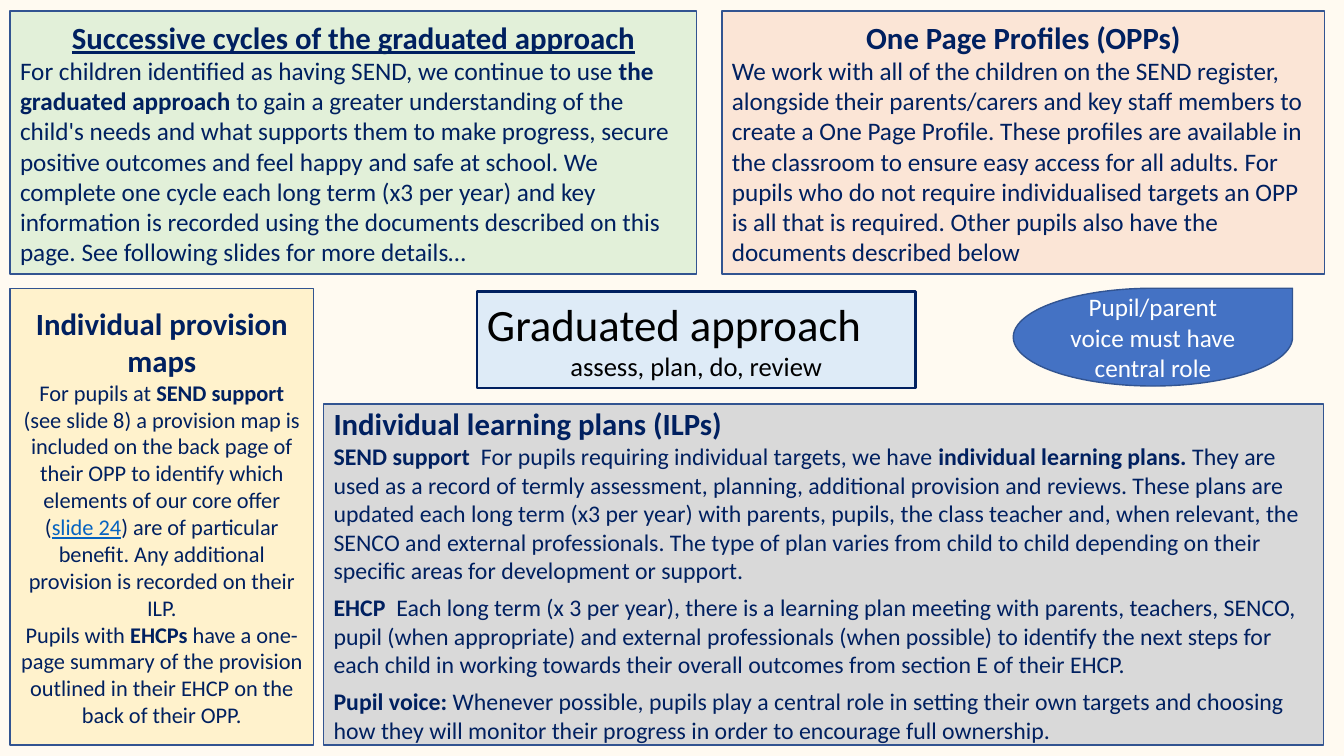
from dataclasses import dataclass

from pptx import Presentation
from pptx.dml.color import RGBColor
from pptx.enum.shapes import MSO_SHAPE as Shape
from pptx.enum.text import MSO_ANCHOR as Anchor, MSO_AUTO_SIZE as AutoSize, PP_ALIGN as Align
from pptx.util import Inches, Pt


@dataclass(frozen=True)
class Theme:
    font: str = "Calibri"
    background: str = "FFFAF1"
    navy: str = "002060"
    black: str = "000000"
    white: str = "FFFFFF"
    link: str = "0563C1"
    outline: str = "325491"
    green: str = "E2F0D9"
    peach: str = "FBE5D6"
    grey: str = "D9D9D9"
    yellow: str = "FFF2CC"
    pale_blue: str = "DEEBF7"
    blue: str = "4472C4"
    title: int = 32
    heading: int = 22
    subtitle: int = 19
    body: int = 18
    plan: int = 17
    small: int = 16


THEME = Theme()


@dataclass
class Run:
    text: str
    bold: bool = False
    underline: bool = False
    color: str = ""


@dataclass
class Line:
    runs: list
    size: int = THEME.body
    align: Align = Align.LEFT
    before: int = 0


def heading(text, align=Align.CENTER, underline=False):
    return Line([Run(text, True, underline)], THEME.heading, align)


class SlideBuilder:
    """Hold the theme and the current slide, and add styled elements to it."""

    def __init__(self, presentation, theme):
        self.theme = theme
        self.slide = presentation.slides.add_slide(presentation.slide_layouts[5])
        fill = self.slide.background.fill
        fill.solid()
        fill.fore_color.rgb = RGBColor.from_string(theme.background)

    def paint(self, shape, fill, outline, width):
        shape.fill.solid()
        shape.fill.fore_color.rgb = RGBColor.from_string(fill)
        shape.line.color.rgb = RGBColor.from_string(outline)
        shape.line.width = Pt(width)

    def set_lines(self, shape, lines, color, anchor):
        frame = shape.text_frame
        frame.word_wrap = True
        frame.auto_size = AutoSize.NONE
        frame.vertical_anchor = anchor
        frame.text = "\n".join("" for _ in lines)
        for paragraph, line in zip(frame.paragraphs, lines):
            paragraph.alignment = line.align
            paragraph.space_before = Pt(line.before)
            for part in line.runs:
                run = paragraph.add_run()
                run.text = part.text
                font = run.font
                font.name = self.theme.font
                font.size = Pt(line.size)
                font.bold = part.bold
                font.underline = part.underline
                font.color.rgb = RGBColor.from_string(part.color or color)

    def title(self, left, top, width, height, lines):
        shape = self.slide.shapes.title
        shape.left, shape.top = Inches(left), Inches(top)
        shape.width, shape.height = Inches(width), Inches(height)
        self.paint(shape, self.theme.pale_blue, self.theme.navy, 1.75)
        self.set_lines(shape, lines, self.theme.black, Anchor.TOP)

    def panel(self, left, top, width, height, fill, lines, kind=Shape.RECTANGLE, color=THEME.navy):
        shape = self.slide.shapes.add_shape(
            kind, Inches(left), Inches(top), Inches(width), Inches(height))
        shape.shadow.inherit = False
        self.paint(shape, fill, self.theme.outline, 1)
        self.set_lines(shape, lines, color, Anchor.MIDDLE)


def main():
    presentation = Presentation()
    presentation.slide_width, presentation.slide_height = Inches(13.33), Inches(7.5)
    builder = SlideBuilder(presentation, THEME)

    builder.panel(0.1, 0.11, 6.81, 2.61, THEME.green, [
        heading("Successive cycles of the graduated approach", underline=True),
        Line([
            Run("For children identified as having SEND, we continue to use "),
            Run("the graduated approach", bold=True),
            Run(" to gain a greater understanding of the child's needs and what supports them to "
                "make progress, secure positive outcomes and feel happy and safe at school. We "
                "complete one cycle each long term (x3 per year) and key information is recorded "
                "using the documents described on this page. See following slides for more "
                "details…"),
        ]),
    ])

    builder.panel(7.16, 0.11, 5.98, 2.61, THEME.peach, [
        heading("One Page Profiles (OPPs)"),
        Line([
            Run("We work with all of the children on the SEND register, alongside their "
                "parents/carers and key staff members to create a One Page Profile. These profiles "
                "are available in the classroom to ensure easy access for all adults. For pupils "
                "who do not require individualised targets an OPP is all that is required. Other "
                "pupils also have the documents described below"),
        ]),
    ])

    builder.panel(3.21, 4.01, 9.92, 3.38, THEME.grey, [
        heading("Individual learning plans (ILPs)", Align.LEFT),
        Line([
            Run("SEND support  ", bold=True),
            Run("For pupils requiring individual targets, we have "),
            Run("individual learning plans. ", bold=True),
            Run("They are used as a record of termly assessment, planning, additional provision "
                "and reviews. These plans are updated each long term (x3 per year) with parents, "
                "pupils, the class teacher and, when relevant, the SENCO and external "
                "professionals. The type of plan varies from child to child depending on their "
                "specific areas for development or support."),
        ], THEME.plan),
        Line([
            Run("EHCP  ", bold=True),
            Run("Each long term (x 3 per year), there is a learning plan meeting with parents, "
                "teachers, SENCO, pupil (when appropriate) and external professionals (when "
                "possible) to identify the next steps for each child in working towards their "
                "overall outcomes from section E of their EHCP."),
        ], THEME.plan, before=6),
        Line([
            Run("Pupil voice: ", bold=True),
            Run("Whenever possible, pupils play a central role in setting their own targets and "
                "choosing how they will monitor their progress in order to encourage full "
                "ownership."),
        ], THEME.plan, before=6),
    ])

    builder.panel(0.1, 2.86, 3.01, 4.53, THEME.yellow, [
        heading("Individual provision maps"),
        Line([
            Run("For pupils at "),
            Run("SEND support ", bold=True),
            Run("(see slide 8) a provision map is included on the back page of their OPP to "
                "identify which elements of our core offer ("),
            Run("slide 24", underline=True, color=THEME.link),
            Run(") are of particular benefit. Any additional provision is recorded on their ILP."),
        ], THEME.small, Align.CENTER),
        Line([
            Run("Pupils with "),
            Run("EHCPs ", bold=True),
            Run("have a one-page summary of the provision outlined in their EHCP on the back of "
                "their OPP."),
        ], THEME.small, Align.CENTER),
    ])

    builder.title(4.73, 2.89, 4.35, 0.96, [
        Line([Run("Graduated approach")], THEME.title),
        Line([Run("assess, plan, do, review")], THEME.subtitle, Align.CENTER),
    ])

    builder.panel(10.05, 2.86, 2.77, 0.97, THEME.blue, [
        Line([Run("Pupil/parent voice must have central role")], align=Align.CENTER),
    ], Shape.TEAR, THEME.white)

    presentation.save("out.pptx")


if __name__ == "__main__":
    main()
